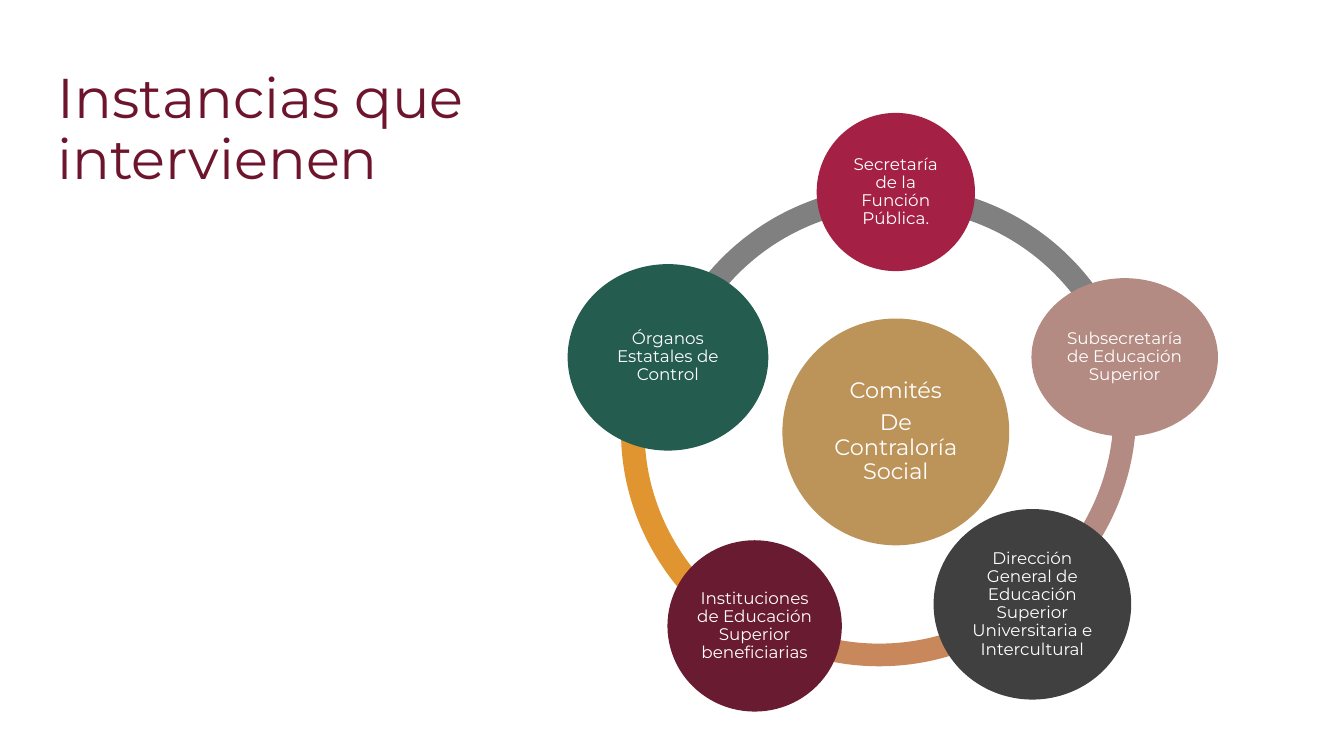
from pptx import Presentation
from pptx import util as u
from pptx.dml.color import RGBColor
from pptx.enum import shapes, text

FONT = "Montserrat"
RING_THICKNESS = 0.046
COLORS = {
    "title": "6E152E",
    "white": "FFFFFF",
    "gray": "808080",
    "orange": "E19530",
    "copper": "C9875C",
    "rose": "B48B83",
    "gold": "BC945A",
    "crimson": "A42145",
    "charcoal": "404040",
    "wine": "691B31",
    "green": "245C4F",
}

# (left, top, width, height), start and end in degrees, colour
RING_ARCS = [
    ((6.45, 1.84, 4.88, 4.88), 198, 270, "gray"),
    ((6.16, 1.74, 5.46, 5.08), 126, 198, "orange"),
    ((6.28, 1.73, 4.88, 4.88), 50.09, 121.09, "copper"),
    ((6.39, 1.64, 4.88, 4.88), 347.06, 53.59, "rose"),
    ((6.45, 1.84, 4.88, 4.88), 270, 342, "gray"),
]

# (left, top, width, height), colour, text size, paragraphs
INSTANCES = [
    ((7.76, 3.16, 2.25, 2.25), "gold", 16, ["Comités", "De Contraloría Social"]),
    ((8.1, 1.12, 1.57, 1.57), "crimson", 12, ["Secretaría de la Función Pública."]),
    ((10.23, 2.76, 1.85, 1.57), "rose", 12, ["Subsecretaría de Educación Superior"]),
    ((9.26, 5.05, 1.96, 1.89), "charcoal", 12,
     ["Dirección General de Educación Superior Universitaria e Intercultural"]),
    ((6.62, 5.36, 1.73, 1.7), "wine", 12,
     ["Instituciones de Educación Superior beneficiarias"]),
    ((5.63, 2.62, 1.99, 1.85), "green", 12, ["Órganos Estatales de Control"]),
]


def rgb(color):
    return RGBColor.from_string(COLORS[color])


def inches(box):
    return [u.Inches(length) for length in box]


def write(paragraph, words, size, color):
    paragraph.line_spacing = 0.9
    run = paragraph.add_run()
    run.text = words
    run.font.name = FONT
    run.font.size = u.Pt(size)
    run.font.color.rgb = rgb(color)


def add_title(slide, words):
    title = slide.shapes.add_textbox(*inches((0.47, 0.61, 4.58, 1.38)))
    frame = title.text_frame
    frame.word_wrap = True
    frame.vertical_anchor = text.MSO_ANCHOR.MIDDLE
    write(frame.paragraphs[0], words, 40, "title")


def add_flat_shape(slide, kind, box, color):
    shape = slide.shapes.add_shape(kind, *inches(box))
    shape.shadow.inherit = False
    shape.fill.solid()
    shape.fill.fore_color.rgb = rgb(color)
    shape.line.fill.background()
    return shape


def add_ring_arc(slide, box, start, end, color):
    arc = add_flat_shape(slide, shapes.MSO_SHAPE.BLOCK_ARC, box, color)
    # Angles are stored in 1/60000 degree, adjustments are scaled by 1/100000.
    arc.adjustments[0] = start * 0.6
    arc.adjustments[1] = end * 0.6
    arc.adjustments[2] = RING_THICKNESS


def add_instance(slide, box, color, size, lines):
    circle = add_flat_shape(slide, shapes.MSO_SHAPE.OVAL, box, color)
    frame = circle.text_frame
    frame.word_wrap = True
    frame.vertical_anchor = text.MSO_ANCHOR.MIDDLE
    frame.margin_left = frame.margin_right = u.Inches(0.02)
    frame.margin_top = frame.margin_bottom = u.Inches(0.02)
    for index, line in enumerate(lines):
        paragraph = frame.add_paragraph() if index else frame.paragraphs[0]
        paragraph.alignment = text.PP_ALIGN.CENTER
        paragraph.space_after = u.Pt(size * 0.35)
        write(paragraph, line, size, "white")


def main():
    deck = Presentation()
    deck.slide_width, deck.slide_height = inches((13.33, 7.5))
    slide = deck.slides.add_slide(deck.slide_layouts[6])
    add_title(slide, "Instancias que intervienen")
    for arc in RING_ARCS:
        add_ring_arc(slide, *arc)
    for instance in INSTANCES:
        add_instance(slide, *instance)
    deck.save("out.pptx")


if __name__ == "__main__":
    main()
